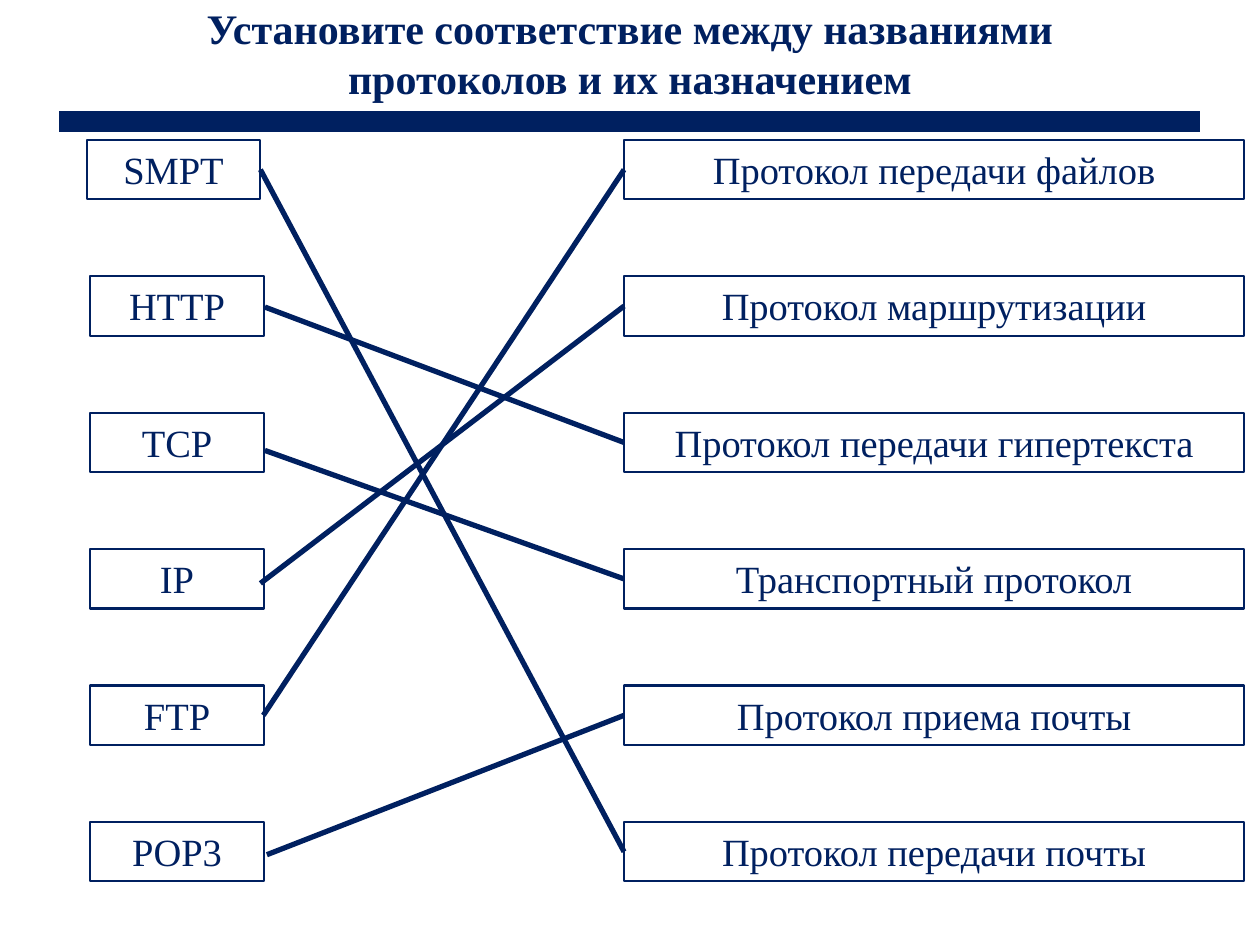
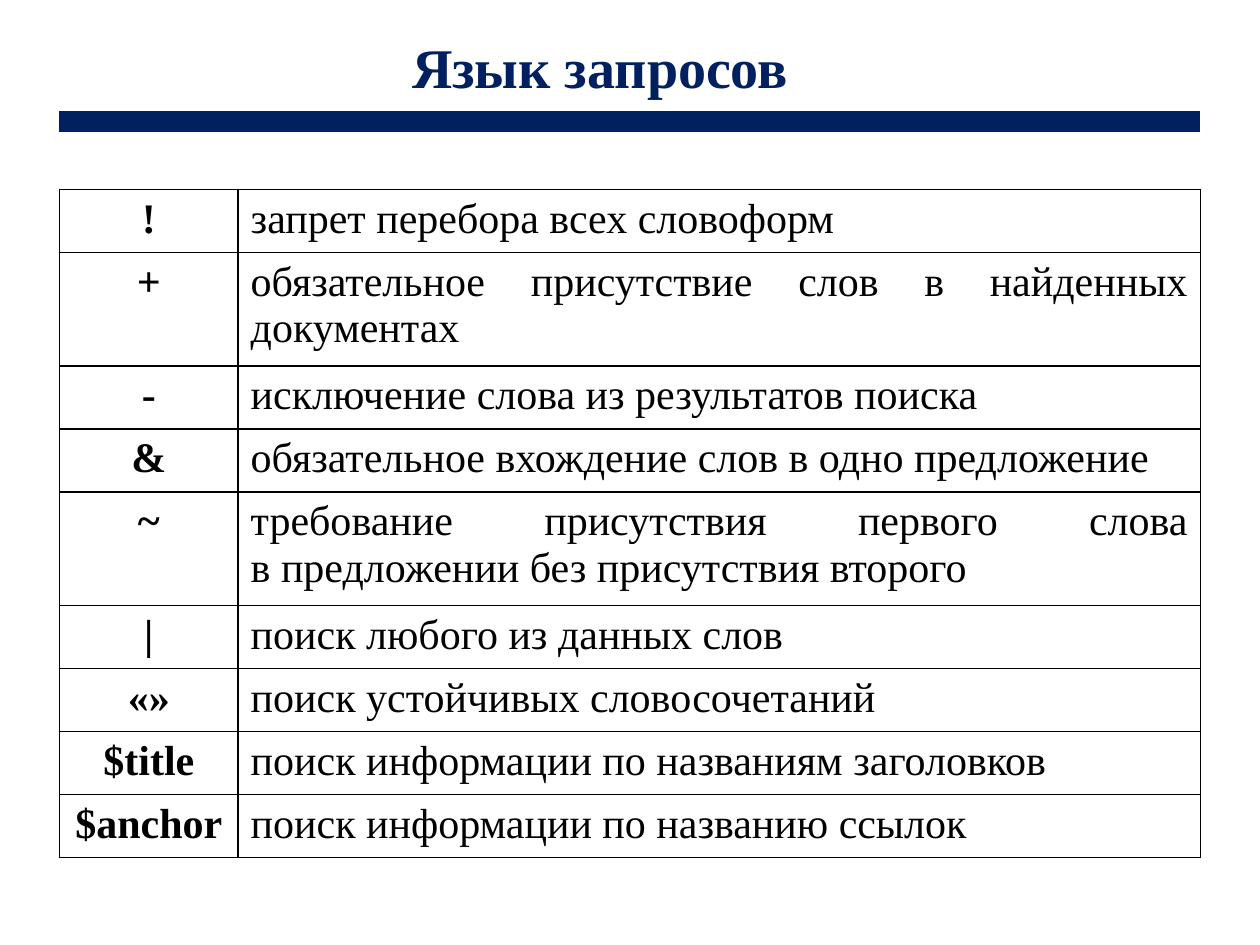
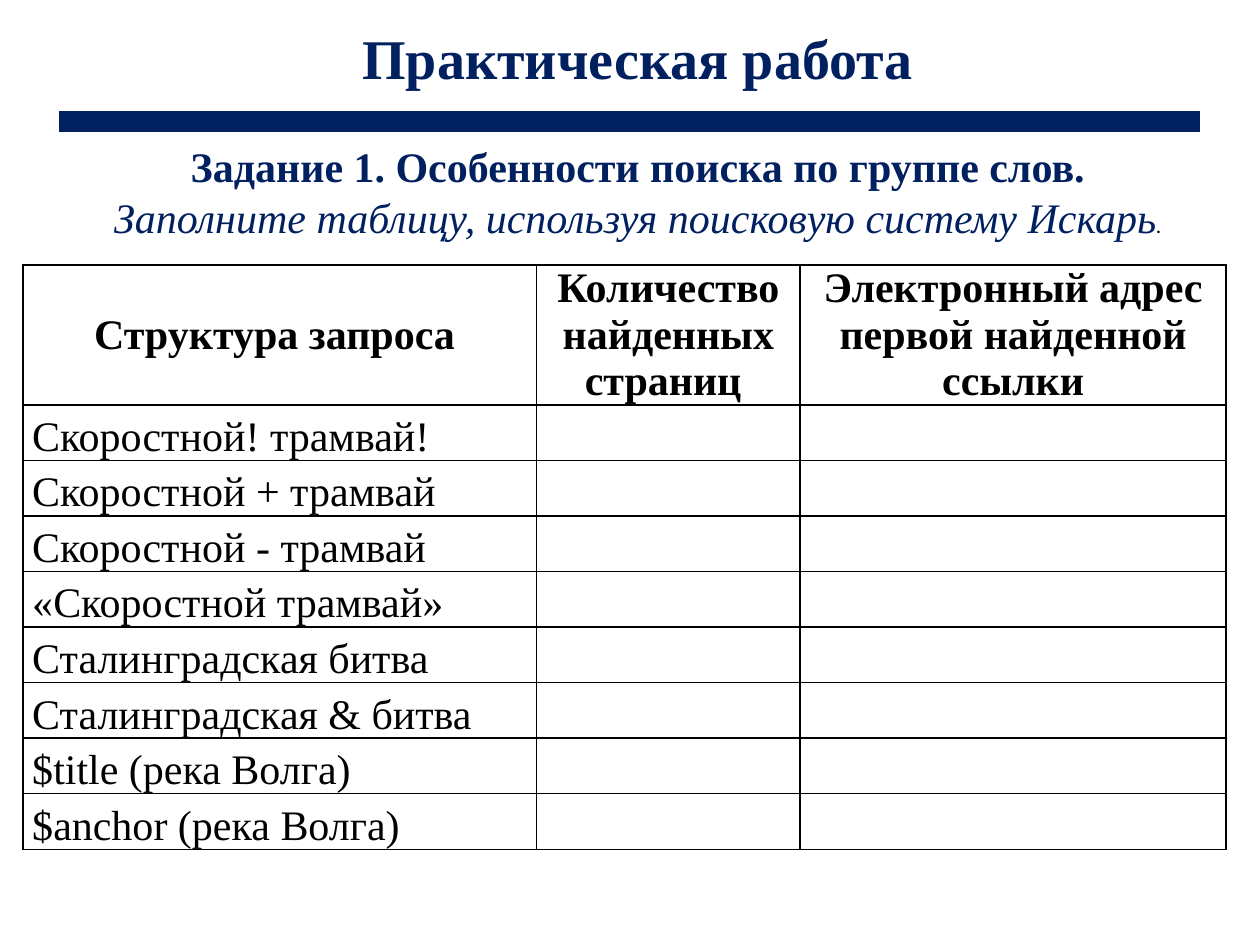
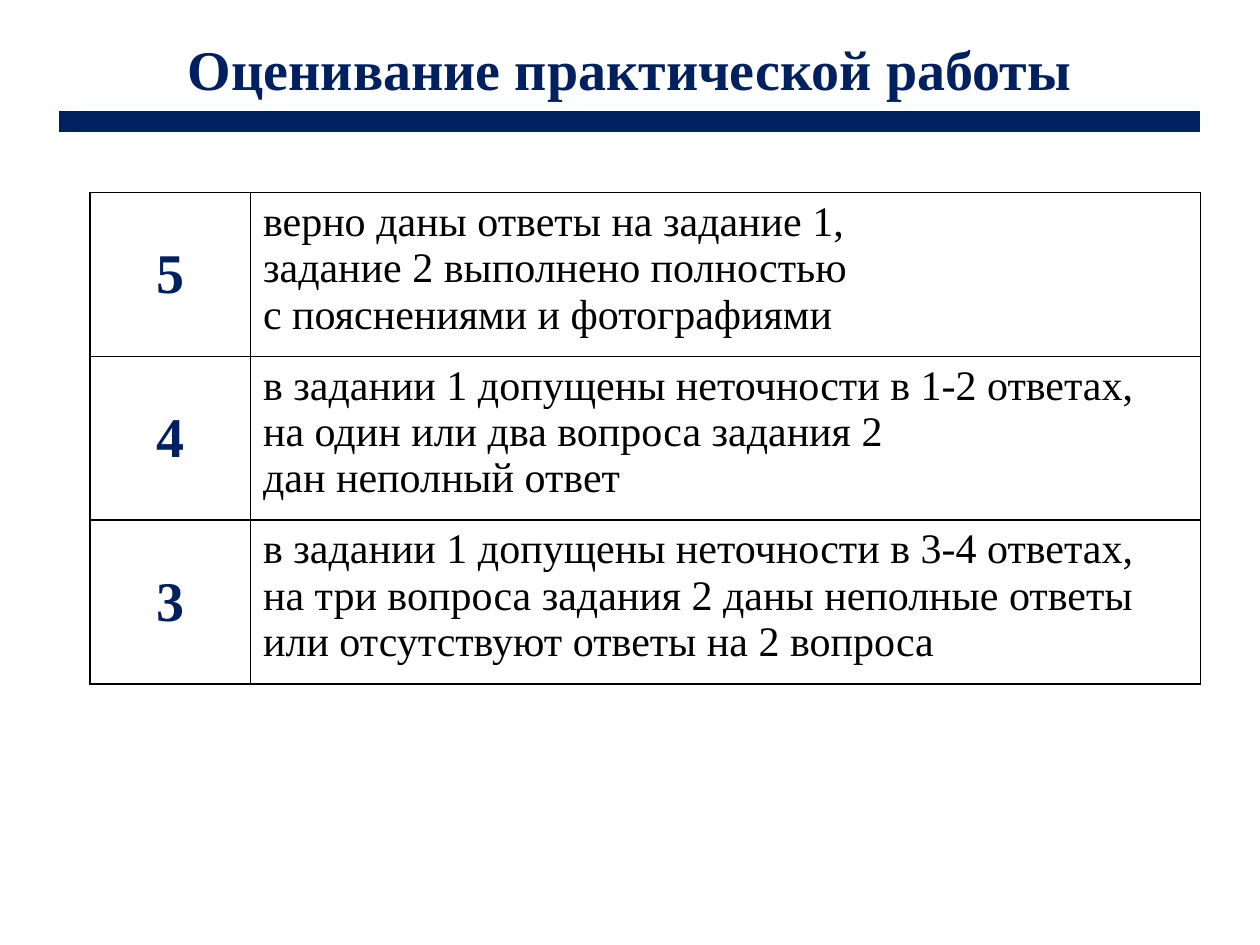
from pptx import Presentation
from pptx.dml.color import RGBColor as RGB
from pptx.enum.shapes import MSO_CONNECTOR as CONN, MSO_SHAPE as SHAPE
from pptx.enum.text import MSO_ANCHOR as ANCHOR, PP_ALIGN as ALIGN
from pptx.oxml import parse_xml
from pptx.oxml.ns import nsdecls
from pptx.util import Cm, Pt

COLORS = {"navy": "002060", "black": "000000"}
FONT = "Times New Roman"


def add_text(p, text, size=24, color="black", bold=False, italic=False,
             font=FONT, align=None, spacing=None, before=None, indent=0):
    """Append text to paragraph p; a newline becomes a line break."""
    if indent:
        p._p.get_or_add_pPr().set("indent", str(Cm(indent)))
    if align is not None:
        p.alignment = align
    if spacing:
        p.line_spacing = spacing
    if before:
        p.space_before = Pt(before)
    for i, line in enumerate(text.split("\n")):
        if i:
            p.add_line_break()
        r = p.add_run()
        r.text = line
        r.font.size, r.font.name = Pt(size), font
        r.font.bold, r.font.italic = bold, italic
        r.font.color.rgb = RGB.from_string(COLORS[color])


class Deck:
    def __init__(self):
        self.prs = Presentation()
        self.prs.slide_width, self.prs.slide_height = Cm(25.4), Cm(19.05)
        self.s = None

    def slide(self):
        self.s = self.prs.slides.add_slide(self.prs.slide_layouts[6])
        self.line(1.19, 2.45, 24.2, 2.45, 11.75)

    def line(self, x1, y1, x2, y2, width=3):
        c = self.s.shapes.add_connector(CONN.STRAIGHT, Cm(x1), Cm(y1), Cm(x2), Cm(y2))
        c.line.color.rgb = RGB.from_string(COLORS["navy"])
        c.line.width = Pt(width)
        c._element.spPr.append(parse_xml(f"<a:effectLst {nsdecls('a')}/>"))

    def text(self, x, y, w, h, wrap=True, anchor=ANCHOR.TOP):
        tf = self.s.shapes.add_textbox(Cm(x), Cm(y), Cm(w), Cm(h)).text_frame
        tf.word_wrap, tf.vertical_anchor = wrap, anchor
        return tf

    def title(self, x, y, w, h, text, wrap=False, size=32, **fmt):
        p = self.text(x, y, w, h, wrap).paragraphs[0]
        add_text(p, text, size=size, color="navy", bold=True, align=ALIGN.CENTER, **fmt)

    def box(self, x, y, w, h, text):
        sp = self.s.shapes.add_shape(SHAPE.RECTANGLE, Cm(x), Cm(y), Cm(w), Cm(h))
        sp.shadow.inherit = False
        sp.fill.background()
        sp.line.color.rgb = RGB.from_string(COLORS["navy"])
        sp.line.width = Pt(1.25)
        tf = sp.text_frame
        tf.word_wrap, tf.vertical_anchor = True, ANCHOR.TOP
        add_text(tf.paragraphs[0], text, size=22, color="navy", align=ALIGN.CENTER)

    def table(self, x, y, widths, heights):
        tbl = self.s.shapes.add_table(len(heights), len(widths), Cm(x), Cm(y),
                                      Cm(sum(widths)), Cm(sum(heights))).table
        tbl.first_row = tbl.horz_banding = False
        for col, w in zip(tbl.columns, widths):
            col.width = Cm(w)
        for row, h in zip(tbl.rows, heights):
            row.height = Cm(h)
        for cell in tbl.iter_cells():
            tcPr = cell._tc.get_or_add_tcPr()
            for side in "LRTB":
                tcPr.append(parse_xml(
                    f'<a:ln{side} {nsdecls("a")} w="{Pt(1)}"><a:solidFill>'
                    f'<a:srgbClr val="{COLORS["black"]}"/></a:solidFill></a:ln{side}>'))
            cell.fill.background()
        return tbl

    def cell(self, cell, *paragraphs, anchor=ANCHOR.TOP, **fmt):
        cell.vertical_anchor = anchor
        tf = cell.text_frame
        for i, text in enumerate(paragraphs):
            add_text(tf.add_paragraph() if i else tf.paragraphs[0], text, **fmt)


def protocols(d):
    d.slide()
    d.title(2.07, -0.08, 21.26, 2.31, wrap=True, size=24,
            text="Установите соответствие между названиями протоколов и их назначением")
    top, step, height, right = 2.82, 2.75, 1.2, 12.58
    # Name, box left, line start, shift of the start below the middle, matching row
    names = [("SMPT", 1.75, 5.25, 0, 5), ("HTTP", 1.82, 5.34, 0.02, 2),
             ("TCP", 1.82, 5.34, 0.16, 3), ("IP", 1.82, 5.25, 0.09, 1),
             ("FTP", 1.82, 5.31, 0, 0), ("POP3", 1.82, 5.38, 0.06, 4)]
    purposes = ["Протокол передачи файлов", "Протокол маршрутизации",
                "Протокол передачи гипертекста", "Транспортный протокол",
                "Протокол приема почты", "Протокол передачи почты"]
    for i, ((name, left, start, shift, match), purpose) in enumerate(zip(names, purposes)):
        y = top + i * step
        d.box(left, y, 3.5, height, name)
        d.box(right, y, 12.5, height, purpose)
        d.line(start, y + height / 2 + shift, right, top + match * step + height / 2)


def query_language(d):
    d.slide()
    d.title(7.48, 0.43, 8.71, 1.65, "Язык запросов", spacing=1.07, indent=0.53)
    rows = [("!", "запрет перебора всех словоформ"),
            ("+", "обязательное присутствие слов в найденных документах"),
            ("-", "исключение слова из результатов поиска"),
            ("&", "обязательное вхождение слов в одно предложение"),
            ("~", "требование присутствия первого слова\nв предложении без присутствия второго"),
            ("|", "поиск любого из данных слов"),
            ("«»", "поиск устойчивых словосочетаний"),
            ("$title", "поиск информации по названиям заголовков"),
            ("$anchor", "поиск информации по названию ссылок")]
    heights = [2.28 if len(meaning) > 50 else 1.27 for _, meaning in rows]
    tbl = d.table(1.2, 3.82, [3.6, 19.4], heights)
    for i, (sign, meaning) in enumerate(rows):
        d.cell(tbl.cell(i, 0), sign, bold=True, align=ALIGN.CENTER)
        d.cell(tbl.cell(i, 1), meaning, align=ALIGN.JUSTIFY)


def practice(d):
    d.slide()
    # Title and task
    tf = d.text(1.15, 0.32, 22.89, 4.7, anchor=ANCHOR.MIDDLE)
    fmt = dict(color="navy", align=ALIGN.CENTER, indent=0.53)
    add_text(tf.paragraphs[0], "Практическая работа", size=32, bold=True, **fmt)
    add_text(tf.add_paragraph(), "Задание 1. Особенности поиска по группе слов.",
             bold=True, before=29, **fmt)
    p = tf.add_paragraph()
    add_text(p, "Заполните таблицу, используя поисковую систему Искарь", italic=True, **fmt)
    add_text(p, ".", size=12, font="Calibri", italic=True)
    # Table to fill in
    heads = ["Структура запроса ", "Количество найденных страниц ",
             "Электронный адрес первой найденной ссылки"]
    queries = ["Скоростной! трамвай!", "Скоростной + трамвай", "Скоростной - трамвай",
               "«Скоростной трамвай»", "Сталинградская битва", "Сталинградская & битва",
               "$title (река Волга)", "$anchor (река Волга)"]
    tbl = d.table(0.46, 5.34, [10.36, 5.31, 8.59], [2.82] + [1.12] * len(queries))
    for cell in tbl.iter_cells():
        cell.margin_left = cell.margin_right = Cm(0.19)
        cell.margin_top = cell.margin_bottom = 0
    for i, head in enumerate(heads):
        d.cell(tbl.cell(0, i), head, anchor=ANCHOR.MIDDLE, bold=True,
               align=ALIGN.CENTER, spacing=Pt(26.6))
    for i, query in enumerate(queries, 1):
        d.cell(tbl.cell(i, 0), query, spacing=Pt(31.7))


def grading(d):
    d.slide()
    d.title(3.44, 0.48, 18.52, 1.65, "Оценивание практической работы", spacing=1.07)
    marks = [("5", "верно даны ответы на задание 1,\nзадание 2 выполнено полностью",
              "с пояснениями и фотографиями"),
             ("4", "в задании 1 допущены неточности в 1-2 ответах,\n"
                   "на один или два вопроса задания 2", "дан неполный ответ"),
             ("3", "в задании 1 допущены неточности в 3-4 ответах,\nна три вопроса задания 2 "
                   "даны неполные ответы или отсутствуют ответы на 2 вопроса")]
    tbl = d.table(1.81, 3.88, [3.24, 19.15], [3.3] * len(marks))
    for i, (mark, *criteria) in enumerate(marks):
        d.cell(tbl.cell(i, 0), mark, anchor=ANCHOR.MIDDLE, size=32, color="navy",
               bold=True, align=ALIGN.CENTER)
        d.cell(tbl.cell(i, 1), *criteria)


def main():
    d = Deck()
    for build in (protocols, query_language, practice, grading):
        build(d)
    d.prs.save("out.pptx")


if __name__ == "__main__":
    main()
